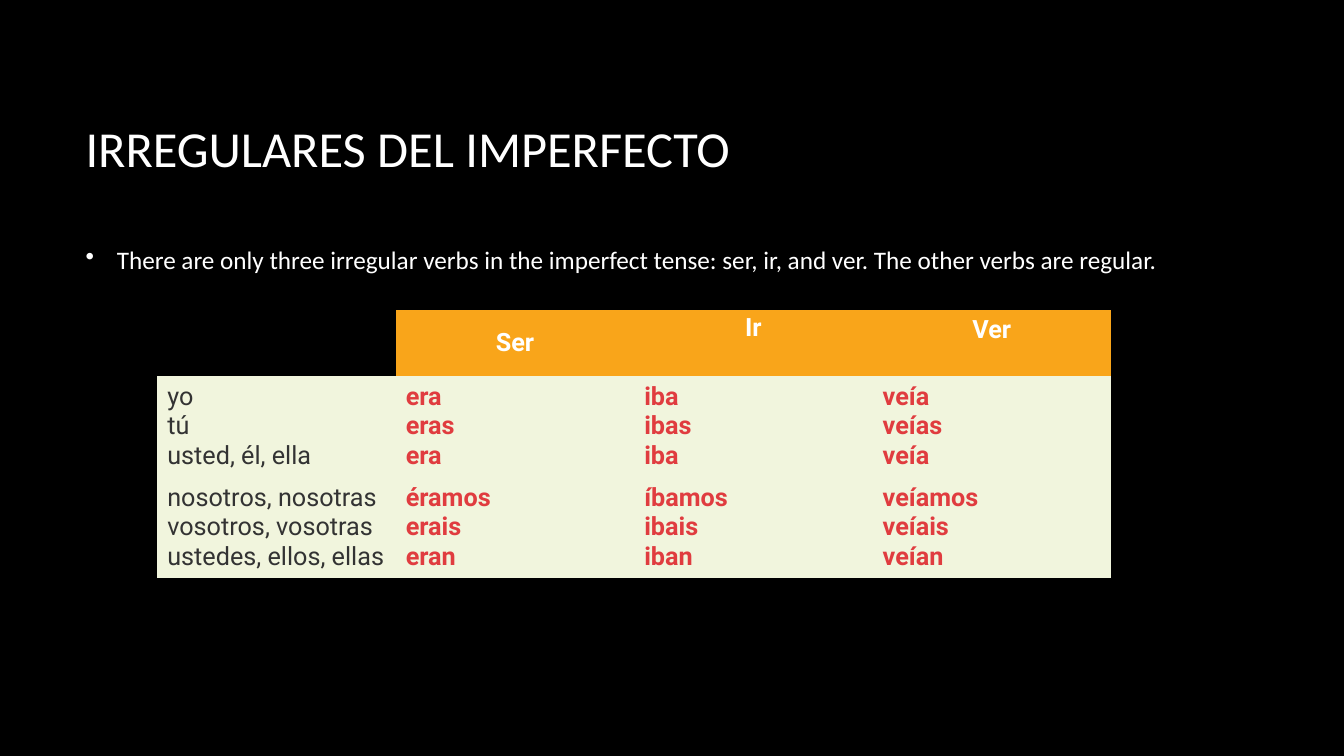
import dataclasses

import lxml.etree
import pptx
import pptx.dml.color
import pptx.enum.text
import pptx.oxml.ns
import pptx.util

Inches = pptx.util.Inches
Pt = pptx.util.Pt
ANCHOR = pptx.enum.text.MSO_ANCHOR
ALIGN = pptx.enum.text.PP_ALIGN
NO_GRID_STYLE = "{2D5ABB26-0587-4C30-8999-92F81FD0307C}"


@dataclasses.dataclass(frozen=True)
class Theme:
    background: str = "000000"
    text: str = "FFFFFF"
    header_fill: str = "F9A51A"
    body_fill: str = "F1F5DD"
    pronoun: str = "333333"
    verb: str = "E03C3F"
    slide_font: str = "Calibri"
    table_font: str = "Roboto"
    title_size: int = 36
    body_size: int = 18


THEME = Theme()

VERBS = ["Ser", "Ir", "Ver"]
CONJUGATION = [
    ["yo\ntú\nusted, él, ella", "era\neras\nera", "iba\nibas\niba", "veía\nveías\nveía"],
    ["nosotros, nosotras\nvosotros, vosotras\nustedes, ellos, ellas",
     "éramos\nerais\neran", "íbamos\nibais\niban", "veíamos\nveíais\nveían"],
]


def rgb(value):
    return pptx.dml.color.RGBColor.from_string(value)


def format_runs(text_frame, font_name, size, color, bold=False):
    for paragraph in text_frame.paragraphs:
        for run in paragraph.runs:
            run.font.name = font_name
            run.font.size = Pt(size)
            run.font.color.rgb = rgb(color)
            run.font.bold = bold


def add_text(slide, box, text, size):
    shape = slide.shapes.add_textbox(*(Inches(length) for length in box))
    text_frame = shape.text_frame
    text_frame.word_wrap = True
    text_frame.vertical_anchor = ANCHOR.MIDDLE
    text_frame.text = text
    format_runs(text_frame, THEME.slide_font, size, THEME.text)
    return text_frame.paragraphs[0]


def add_bullet_text(slide, box, text):
    paragraph = add_text(slide, box, text, THEME.body_size)
    paragraph.space_after = Pt(10)
    properties = paragraph._p.get_or_add_pPr()
    properties.set("marL", str(Inches(0.31)))
    properties.set("indent", str(-Inches(0.31)))
    bullet = lxml.etree.SubElement(properties, pptx.oxml.ns.qn("a:buChar"))
    bullet.set("char", "•")


def fill_cell(cell, text, fill, color, bold):
    cell.fill.solid()
    cell.fill.fore_color.rgb = rgb(fill)
    cell.vertical_anchor = ANCHOR.MIDDLE
    cell.text_frame.text = text
    format_runs(cell.text_frame, THEME.table_font, THEME.body_size, color, bold)


def add_conjugation_table(slide, box, row_heights):
    left, top, width, height = (Inches(length) for length in box)
    table = slide.shapes.add_table(len(row_heights), len(VERBS) + 1,
                                   left, top, width, height).table
    table.first_row = False
    table.horz_banding = False
    table._tbl.tblPr.find(pptx.oxml.ns.qn("a:tableStyleId")).text = NO_GRID_STYLE
    for row, row_height in zip(table.rows, row_heights):
        row.height = Inches(row_height)

    # Header: the corner stays empty, the last two verbs sit at the top
    table.cell(0, 0).fill.background()
    for column, verb in enumerate(VERBS, start=1):
        cell = table.cell(0, column)
        fill_cell(cell, verb, THEME.header_fill, THEME.text, True)
        cell.text_frame.paragraphs[0].alignment = ALIGN.CENTER
        if verb != "Ser":
            cell.vertical_anchor = ANCHOR.TOP
        if verb != "Ver":
            cell.margin_left = cell.margin_right = Inches(0.07)
            cell.margin_top = cell.margin_bottom = Inches(0.03)

    # Pronouns in the first column, verb forms in the others
    for row, forms in enumerate(CONJUGATION, start=1):
        for column, text in enumerate(forms):
            color = THEME.verb if column else THEME.pronoun
            fill_cell(table.cell(row, column), text, THEME.body_fill, color, column > 0)


def build_slide(presentation):
    slide = presentation.slides.add_slide(presentation.slide_layouts[6])
    slide.background.fill.solid()
    slide.background.fill.fore_color.rgb = rgb(THEME.background)

    # Title and introduction
    add_text(slide, (0.75, 0.67, 11.08, 1.59), "IRREGULARES DEL IMPERFECTO", THEME.title_size)
    add_bullet_text(slide, (0.75, 2.34, 11.08, 0.47),
                    "There are only three irregular verbs in the imperfect tense: "
                    "ser, ir, and ver. The other verbs are regular.")

    # Conjugations
    add_conjugation_table(slide, (1.56, 3.08, 9.46, 2.61), (0.65, 0.98, 0.98))


def main():
    presentation = pptx.Presentation()
    presentation.slide_width = Inches(13.33)
    presentation.slide_height = Inches(7.5)
    build_slide(presentation)
    presentation.save("out.pptx")


if __name__ == "__main__":
    main()
